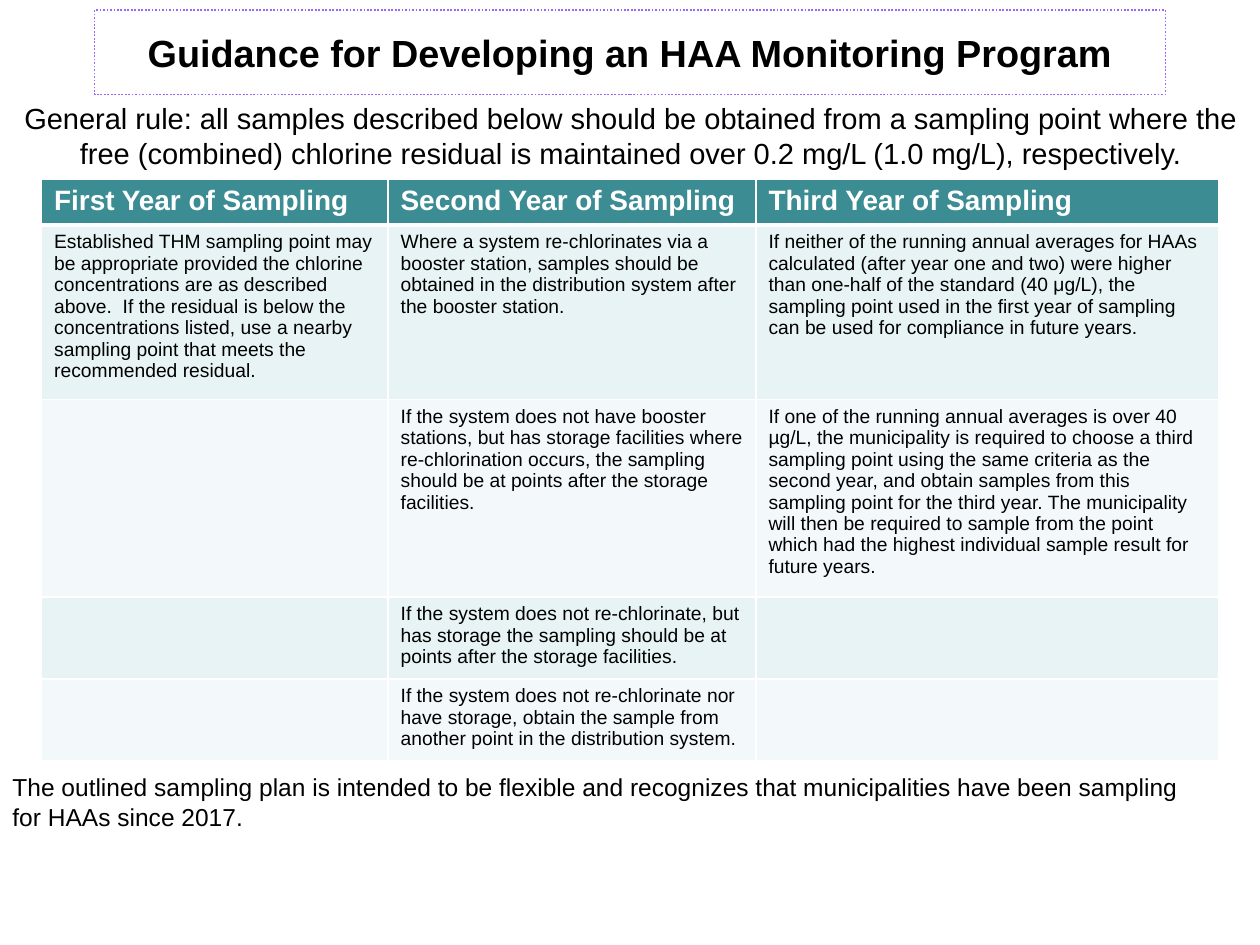
from dataclasses import dataclass

from pptx import Presentation
from pptx.dml.color import RGBColor
from pptx.enum.dml import MSO_LINE
from pptx.enum.text import MSO_ANCHOR, MSO_AUTO_SIZE, PP_ALIGN
from pptx.oxml.ns import qn
from pptx.util import Inches, Pt
from lxml import etree

DOTTED = MSO_LINE.ROUND_DOT
MIDDLE = MSO_ANCHOR.MIDDLE
NO_AUTOFIT = MSO_AUTO_SIZE.NONE
LEFT, CENTER = PP_ALIGN.LEFT, PP_ALIGN.CENTER
TITLE_ONLY = 5


@dataclass(frozen=True)
class Theme:
    """Colours and type sizes of the slide."""
    font: str = "Arial"
    text: str = "000000"
    white: str = "FFFFFF"
    outline: str = "9966FF"
    header: str = "3C8C93"
    bands: tuple = ("E7F3F4", "F3F9FA")
    title_size: float = 21.6
    rule_size: float = 16.6
    header_size: float = 16
    note_size: float = 14
    cell_size: float = 11


class SlideBuilder:
    """Adds styled elements to the current slide."""

    def __init__(self, slide, theme):
        self.s = slide
        self.theme = theme

    def style(self, p, size, color, bold=False, align=LEFT):
        """Set the font and alignment of a paragraph."""
        p.alignment = align
        p.font.name = self.theme.font
        p.font.size = Pt(size)
        p.font.bold = bold
        p.font.color.rgb = RGBColor.from_string(color)

    def title(self, text, left, top, width, height):
        """Place the title in a dotted frame."""
        sp = self.s.shapes.title
        sp.left, sp.top = Inches(left), Inches(top)
        sp.width, sp.height = Inches(width), Inches(height)
        sp.line.color.rgb = RGBColor.from_string(self.theme.outline)
        sp.line.width = Pt(1)
        sp.line.dash_style = DOTTED
        tf = sp.text_frame
        tf.text = text
        tf.auto_size = NO_AUTOFIT
        tf.vertical_anchor = MIDDLE
        self.style(tf.paragraphs[0], self.theme.title_size, self.theme.text, True, CENTER)

    def text(self, text, left, top, width, height, size, align=LEFT):
        """Add a wrapped text box."""
        sp = self.s.shapes.add_textbox(Inches(left), Inches(top), Inches(width), Inches(height))
        tf = sp.text_frame
        tf.word_wrap = True
        tf.text = text
        self.style(tf.paragraphs[0], size, self.theme.text, align=align)

    def border(self, cell, edge, width):
        """Draw one white edge of a cell."""
        tc_pr = cell._tc.get_or_add_tcPr()
        ln = etree.SubElement(tc_pr, qn(f"a:ln{edge}"), w=str(Pt(width)))
        fill = etree.SubElement(ln, qn("a:solidFill"))
        etree.SubElement(fill, qn("a:srgbClr"), val=self.theme.white)

    def table(self, rows, left, top, widths, heights):
        """Add a banded table with a header row."""
        theme = self.theme
        frame = self.s.shapes.add_table(
            len(rows), len(widths), Inches(left), Inches(top),
            Inches(sum(widths)), Inches(sum(heights)))
        table = frame.table
        for column, width in zip(table.columns, widths):
            column.width = Inches(width)
        for i, (row, height, texts) in enumerate(zip(table.rows, heights, rows)):
            row.height = Inches(height)
            is_header = i == 0
            color = theme.header if is_header else theme.bands[(i - 1) % 2]
            edges = {"L": 1, "R": 1, "T": 3 if i == 1 else 1, "B": 3 if is_header else 1}
            for cell, text in zip(row.cells, texts):
                for edge, width in edges.items():
                    self.border(cell, edge, width)
                cell.fill.solid()
                cell.fill.fore_color.rgb = RGBColor.from_string(color)
                cell.text = text
                p = cell.text_frame.paragraphs[0]
                if is_header:
                    self.style(p, theme.header_size, theme.white, True)
                else:
                    self.style(p, theme.cell_size, theme.text)


SAMPLING_PLAN = [
    ("First Year of Sampling", "Second Year of Sampling", "Third Year of Sampling"),
    ("Established THM sampling point may be appropriate provided the chlorine "
     "concentrations are as described above.  If the residual is below the "
     "concentrations listed, use a nearby sampling point that meets the "
     "recommended residual.",
     "Where a system re-chlorinates via a booster station, samples should be "
     "obtained in the distribution system after the booster station.",
     "If neither of the running annual averages for HAAs calculated (after year "
     "one and two) were higher than one-half of the standard (40 μg/L), the "
     "sampling point used in the first year of sampling can be used for "
     "compliance in future years."),
    ("",
     "If the system does not have booster stations, but has storage facilities "
     "where re-chlorination occurs, the sampling should be at points after the "
     "storage facilities.",
     "If one of the running annual averages is over 40 µg/L, the municipality is "
     "required to choose a third sampling point using the same criteria as the "
     "second year, and obtain samples from this sampling point for the third "
     "year. The municipality will then be required to sample from the point "
     "which had the highest individual sample result for future years."),
    ("",
     "If the system does not re-chlorinate, but has storage the sampling should "
     "be at points after the storage facilities.",
     ""),
    ("",
     "If the system does not re-chlorinate nor have storage, obtain the sample "
     "from another point in the distribution system.",
     ""),
]


def main():
    """Build and save the slide."""
    prs = Presentation()
    prs.slide_width, prs.slide_height = Inches(10), Inches(7.5)
    theme = Theme()
    slide = SlideBuilder(prs.slides.add_slide(prs.slide_layouts[TITLE_ONLY]), theme)
    slide.title("Guidance for Developing an HAA Monitoring Program", 0.75, 0.08, 8.5, 0.67)
    slide.text(
        "General rule: all samples described below should be obtained from a "
        "sampling point where the free (combined) chlorine residual is maintained "
        "over 0.2 mg/L (1.0 mg/L), respectively.",
        0, 0.75, 10, 0.67, theme.rule_size, CENTER)
    slide.table(SAMPLING_PLAN, 0.33, 1.42, (2.75, 2.92, 3.67), (0.34, 1.29, 1.46, 0.61, 0.61))
    slide.text(
        "The outlined sampling plan is intended to be flexible and recognizes that "
        "municipalities have been sampling for HAAs since 2017.",
        0, 6.08, 9.58, 0.57, theme.note_size)
    prs.save("out.pptx")


if __name__ == "__main__":
    main()
